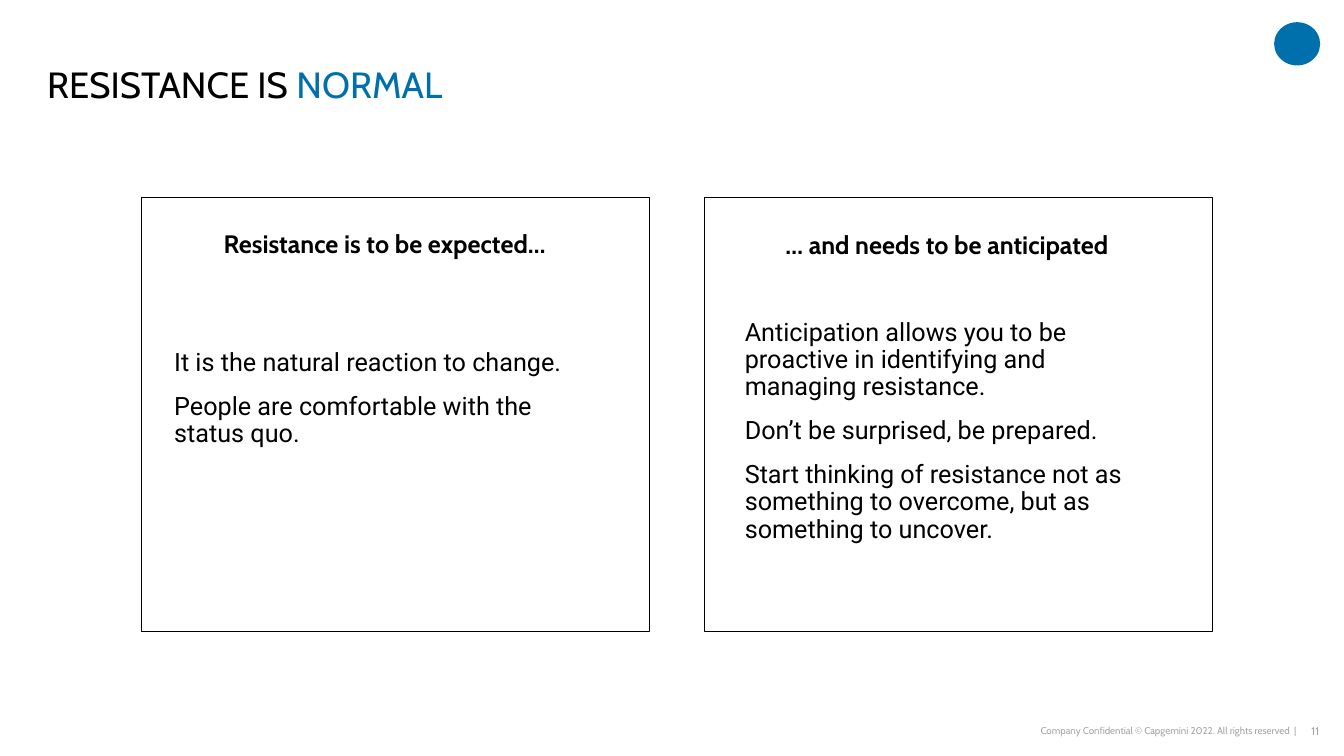
from pptx import Presentation
from pptx.dml.color import RGBColor
from pptx.enum.shapes import MSO_SHAPE
from pptx.enum.text import MSO_ANCHOR, MSO_AUTO_SIZE, PP_ALIGN
from pptx.oxml.ns import qn
from pptx.util import Cm, Pt

BLACK = RGBColor(0x00, 0x00, 0x00)
BLUE = RGBColor(0x00, 0x70, 0xAD)
GREY = RGBColor(0xA6, 0xA6, 0xA6)
LEFT, CENTER, RIGHT = PP_ALIGN.LEFT, PP_ALIGN.CENTER, PP_ALIGN.RIGHT
TOP, MIDDLE = MSO_ANCHOR.TOP, MSO_ANCHOR.MIDDLE
NO_AUTOFIT = MSO_AUTO_SIZE.NONE
RECTANGLE, OVAL = MSO_SHAPE.RECTANGLE, MSO_SHAPE.OVAL
COMPARISON_LAYOUT = 4

TITLE_FONT = {"name": "Cabin", "size": Pt(26), "bold": False}
HEADING_FONT = {"name": "Cabin", "size": Pt(18), "bold": True}
LIST_FONT = {"name": "Roboto", "size": Pt(18), "bold": False}

PANEL_SIZE = (12.8, 10.92)
PANEL_TOP = 4.98
PANEL_LEFT, PANEL_STEP = 3.56, 14.19
# Boxes are left, top, width, height in cm, measured from the panel's corner.
PANELS = [
    {
        "heading": "Resistance is to be expected…",
        "heading_box": (0.28, 0.23, 11.71, 1.93),
        "points": [
            "It is the natural reaction to change.",
            "People are comfortable with the status quo.",
        ],
        "list_box": (0.58, 3.58, 11.13, 3.02),
    },
    {
        "heading": "… and needs to be anticipated",
        "heading_box": (0.26, 0.28, 11.71, 1.9),
        "points": [
            "Anticipation allows you to be proactive in identifying and managing resistance.",
            "Don’t be surprised, be prepared.",
            "Start thinking of resistance not as something to overcome, but as something to uncover.",
        ],
        "list_box": (0.77, 2.82, 10.69, 6.22),
    },
]


def set_values(target, values):
    for name, value in values.items():
        setattr(target, name, value)


def place(shape, left, top, width, height):
    set_values(shape, {"left": Cm(left), "top": Cm(top),
                       "width": Cm(width), "height": Cm(height)})


def set_frame(shape, anchor, side_margin, top_margin, bottom_margin):
    set_values(shape.text_frame, {
        "word_wrap": True, "auto_size": NO_AUTOFIT, "vertical_anchor": anchor,
        "margin_left": Cm(side_margin), "margin_right": Cm(side_margin),
        "margin_top": Cm(top_margin), "margin_bottom": Cm(bottom_margin),
    })


def format_paragraph(paragraph, alignment, space_after=0):
    """Remove the inherited bullet and indent, and set the spacing."""
    properties = paragraph._p.get_or_add_pPr()
    properties.set("marL", "0")
    properties.set("indent", "0")
    properties.append(properties.makeelement(qn("a:buNone"), {}))
    set_values(paragraph, {"alignment": alignment, "line_spacing": 0.9,
                           "space_before": Pt(0), "space_after": Pt(space_after)})


def add_run(paragraph, text, font_values, color):
    run = paragraph.add_run()
    run.text = text
    set_values(run.font, font_values)
    run.font.color.rgb = color


def build_title(title, left, top, width, height):
    place(title, left, top, width, height)
    set_frame(title, TOP, 0, 0.46, 0)
    paragraph = title.text_frame.paragraphs[0]
    format_paragraph(paragraph, LEFT)
    add_run(paragraph, "RESISTANCE IS ", TITLE_FONT, BLACK)
    add_run(paragraph, "NORMAL", TITLE_FONT, BLUE)


def build_panel(slide, panel, heading, points, left, top):
    """Draw the outlined panel and fill its heading and list placeholders."""
    outline = slide.shapes.add_shape(RECTANGLE, Cm(left), Cm(top),
                                     *(Cm(length) for length in PANEL_SIZE))
    outline.shadow.inherit = False
    outline.fill.background()
    outline.line.color.rgb = BLACK
    outline.line.width = Pt(0.5)

    for shape, key in ((heading, "heading_box"), (points, "list_box")):
        x, y, width, height = panel[key]
        place(shape, left + x, top + y, width, height)

    set_frame(heading, MIDDLE, 0.74, 0.13, 0.13)
    paragraph = heading.text_frame.paragraphs[0]
    format_paragraph(paragraph, CENTER)
    add_run(paragraph, panel["heading"], HEADING_FONT, BLACK)

    set_frame(points, TOP, 0.25, 0.25, 0.25)
    for index, text in enumerate(panel["points"]):
        frame = points.text_frame
        paragraph = frame.add_paragraph() if index else frame.paragraphs[0]
        format_paragraph(paragraph, LEFT, space_after=12)
        add_run(paragraph, text, LIST_FONT, BLACK)


def build_emblem(slide, left, top, width, height):
    emblem = slide.shapes.add_shape(OVAL, Cm(left), Cm(top), Cm(width), Cm(height))
    emblem.shadow.inherit = False
    emblem.fill.solid()
    emblem.fill.fore_color.rgb = BLUE
    emblem.line.fill.background()


def build_footer(slide, left, top, width, height):
    number_width = 0.58
    copyright_width = width - number_width
    notes = [
        ("Company Confidential © Capgemini 2022. All rights reserved  |",
         left, copyright_width, 7),
        ("11", left + copyright_width, number_width, 8),
    ]
    for text, note_left, note_width, size in notes:
        box = slide.shapes.add_textbox(Cm(note_left), Cm(top), Cm(note_width), Cm(height))
        set_frame(box, MIDDLE, 0, 0, 0)
        paragraph = box.text_frame.paragraphs[0]
        paragraph.alignment = RIGHT
        add_run(paragraph, text, {"name": "Cabin", "size": Pt(size)}, GREY)


def main():
    presentation = Presentation()
    presentation.slide_width = Cm(33.87)
    presentation.slide_height = Cm(19.05)
    slide = presentation.slides.add_slide(presentation.slide_layouts[COMPARISON_LAYOUT])
    title, *bodies = slide.placeholders

    build_title(title, 1.19, 1.22, 31.5, 2.06)
    for index, panel in enumerate(PANELS):
        heading, points = bodies[2 * index:2 * index + 2]
        build_panel(slide, panel, heading, points,
                    PANEL_LEFT + index * PANEL_STEP, PANEL_TOP)
    build_emblem(slide, 32.11, 0.56, 1.16, 1.09)
    build_footer(slide, 20.07, 18.11, 13.18, 0.61)
    presentation.save("out.pptx")


if __name__ == "__main__":
    main()
